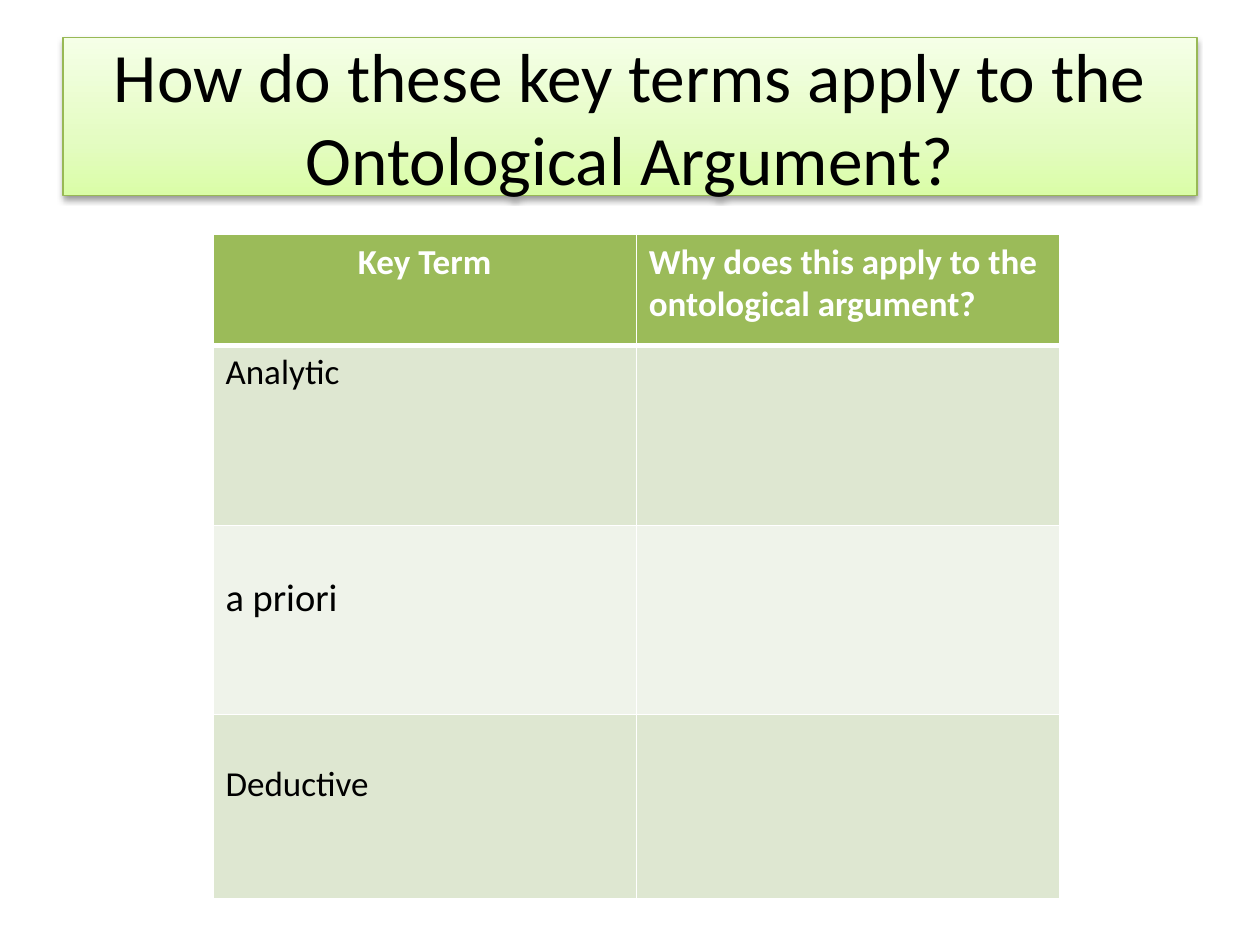
import pptx
import pptx.dml.color
import pptx.enum.shapes
import pptx.enum.text
import pptx.oxml
import pptx.oxml.ns
import pptx.util

Inches = pptx.util.Inches
Pt = pptx.util.Pt
RGBColor = pptx.dml.color.RGBColor
ALIGN = pptx.enum.text.PP_ALIGN

BLACK = RGBColor(0x00, 0x00, 0x00)
WHITE = RGBColor(0xFF, 0xFF, 0xFF)
GREEN = RGBColor(0x9B, 0xBB, 0x59)
GREEN_LINE = RGBColor(0x98, 0xB9, 0x55)
BAND_DARK = RGBColor(0xDE, 0xE7, 0xD1)
BAND_LIGHT = RGBColor(0xEF, 0xF3, 0xEA)
TITLE_STOPS = [
    (0, RGBColor(0xDA, 0xFD, 0xA7)),
    (35, RGBColor(0xE4, 0xFC, 0xC2)),
    (100, RGBColor(0xF5, 0xFF, 0xE7)),
]

TITLE = "How do these key terms apply to the Ontological Argument?"
HEADERS = [
    ("Key Term", ALIGN.CENTER),
    ("Why does this apply to the ontological argument?", ALIGN.LEFT),
]
TERMS = [
    ("Analytic", 20, 0.05, 1.43),
    ("a priori", 22, 0.39, 1.5),
    ("Deductive", 20, 0.39, 1.46),
]
HEADER_HEIGHT = 0.88
COLUMN_WIDTH = 3.36
NAMESPACE = pptx.oxml.ns.nsdecls("a")


def add_text(frame, text, size, color, bold=False, align=ALIGN.LEFT):
    paragraph = frame.paragraphs[0]
    paragraph.alignment = align
    run = paragraph.add_run()
    run.text = text
    run.font.name = "Calibri"
    run.font.size = Pt(size)
    run.font.bold = bold
    run.font.color.rgb = color


def add_title(slide):
    shape = slide.shapes.add_shape(
        pptx.enum.shapes.MSO_SHAPE.RECTANGLE,
        Inches(0.5), Inches(0.3), Inches(9), Inches(1.25))
    shape.line.color.rgb = GREEN_LINE
    shape.line.width = Pt(0.75)
    shape.shadow.inherit = False
    properties = shape._element.spPr
    stops = "".join(
        f'<a:gs pos="{position * 1000}"><a:srgbClr val="{color}"/></a:gs>'
        for position, color in TITLE_STOPS)
    gradient = pptx.oxml.parse_xml(
        f'<a:gradFill {NAMESPACE} rotWithShape="1"><a:gsLst>{stops}</a:gsLst>'
        '<a:lin ang="16200000" scaled="0"/></a:gradFill>')
    properties.find(pptx.oxml.ns.qn("a:ln")).addprevious(gradient)
    shadow = pptx.oxml.parse_xml(
        f'<a:outerShdw {NAMESPACE} blurRad="{Pt(3.1)}" dist="{Pt(1.6)}" '
        'dir="5400000" rotWithShape="0"><a:srgbClr val="000000">'
        '<a:alpha val="38000"/></a:srgbClr></a:outerShdw>')
    properties.find(pptx.oxml.ns.qn("a:effectLst")).append(shadow)
    frame = shape.text_frame
    frame.word_wrap = True
    frame.vertical_anchor = pptx.enum.text.MSO_ANCHOR.MIDDLE
    add_text(frame, TITLE, 39.6, BLACK, align=ALIGN.CENTER)


def style_cell(cell, color, top_width, bottom_width):
    cell.fill.solid()
    cell.fill.fore_color.rgb = color
    properties = cell._tc.get_or_add_tcPr()
    widths = [("L", 1), ("R", 1), ("T", top_width), ("B", bottom_width)]
    for index, (side, width) in enumerate(widths):
        border = pptx.oxml.parse_xml(
            f'<a:ln{side} {NAMESPACE} w="{Pt(width)}"><a:solidFill>'
            f'<a:srgbClr val="{WHITE}"/></a:solidFill></a:ln{side}>')
        properties.insert(index, border)


def add_terms_table(slide):
    heights = [HEADER_HEIGHT] + [term[3] for term in TERMS]
    table = slide.shapes.add_table(
        len(heights), len(HEADERS), Inches(1.69), Inches(1.86),
        Inches(COLUMN_WIDTH * len(HEADERS)), Inches(sum(heights))).table
    for column in table.columns:
        column.width = Inches(COLUMN_WIDTH)
    for row_index, height in enumerate(heights):
        table.rows[row_index].height = Inches(height)
        band = BAND_DARK if row_index % 2 else BAND_LIGHT
        for cell in table.rows[row_index].cells:
            style_cell(cell, band if row_index else GREEN,
                       3 if row_index == 1 else 1, 1 if row_index else 3)
    for column_index, (text, align) in enumerate(HEADERS):
        add_text(table.cell(0, column_index).text_frame, text, 20, WHITE, True, align)
    for row_index, (text, size, margin, _) in enumerate(TERMS, 1):
        cell = table.cell(row_index, 0)
        cell.margin_top = Inches(margin)
        add_text(cell.text_frame, text, size, BLACK)


def main():
    presentation = pptx.Presentation()
    presentation.slide_width = Inches(10)
    presentation.slide_height = Inches(7.5)
    slide = presentation.slides.add_slide(presentation.slide_layouts[6])
    add_title(slide)
    add_terms_table(slide)
    presentation.save("out.pptx")


if __name__ == "__main__":
    main()
